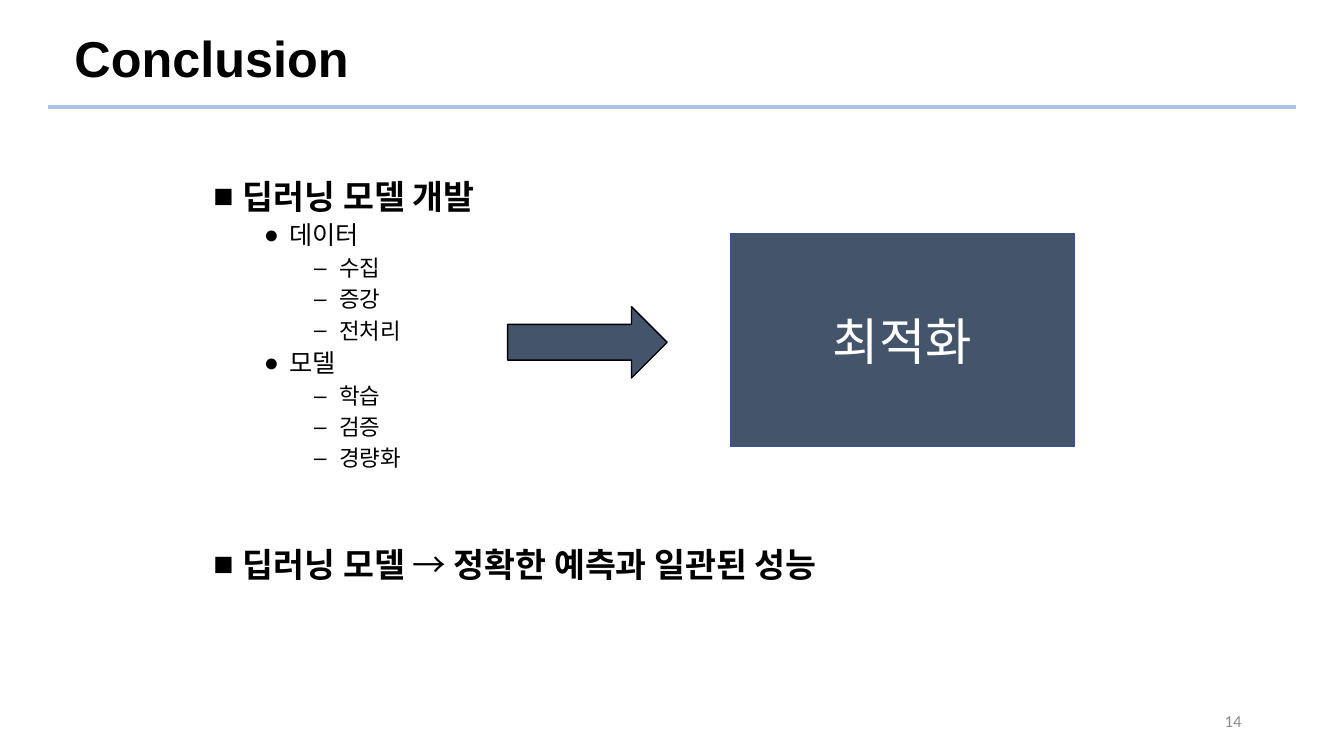
from lxml import etree
from pptx import Presentation
from pptx.dml.color import RGBColor
from pptx.enum.shapes import MSO_CONNECTOR, MSO_SHAPE
from pptx.enum.text import MSO_ANCHOR, MSO_AUTO_SIZE, PP_ALIGN
from pptx.oxml.ns import qn
from pptx.util import Pt

STRAIGHT = MSO_CONNECTOR.STRAIGHT
RECTANGLE, RIGHT_ARROW = MSO_SHAPE.RECTANGLE, MSO_SHAPE.RIGHT_ARROW
TOP, MIDDLE = MSO_ANCHOR.TOP, MSO_ANCHOR.MIDDLE
LEFT, CENTER, RIGHT = PP_ALIGN.LEFT, PP_ALIGN.CENTER, PP_ALIGN.RIGHT
TITLE_ONLY = 5

BLACK, WHITE, GRAY = "000000", "FFFFFF", "8C8C8C"
SLATE, BLUE, PALE_BLUE = "44546A", "325491", "ABC0E4"

# Per level: bullet, size, bold, left margin, hanging indent, space before
LEVELS = [
    ("■", 24, True, 21, 21, 10),
    ("●", 18, False, 54, 18, 5),
    ("‒", 16, False, 90, 18, 5),
]
LINE_FACTOR = 1.08
CLOSING_GAP = 54.4

# Level and text of each outline point
OUTLINE = [
    (0, "딥러닝 모델 개발"),
    (1, "데이터"), (2, "수집"), (2, "증강"), (2, "전처리"),
    (1, "모델"), (2, "학습"), (2, "검증"), (2, "경량화"),
]
CLOSING = [("딥러닝 모델 ", True), ("→ ", False), ("정확한 예측과 일관된 성능", True)]


def color(value):
    return RGBColor.from_string(value)


def add_run(paragraph, text, size, font_name, text_color, bold=False):
    run = paragraph.add_run()
    run.text = text
    run.font.size = Pt(size)
    run.font.name = font_name
    run.font.bold = bold
    run.font.color.rgb = color(text_color)


def set_frame(shape, anchor):
    frame = shape.text_frame
    frame.word_wrap = True
    frame.auto_size = MSO_AUTO_SIZE.NONE
    frame.vertical_anchor = anchor
    return frame


def add_text_box(slide, box, anchor):
    return set_frame(slide.shapes.add_textbox(*map(Pt, box)), anchor)


def add_header(slide, box):
    left, top, width, height = box
    # Title
    title = slide.shapes.title
    title.left, title.top = Pt(left + 12), Pt(top)
    title.width, title.height = Pt(782), Pt(height - 4)
    paragraph = set_frame(title, MIDDLE).paragraphs[0]
    paragraph.alignment = LEFT
    paragraph.line_spacing = 0.9
    add_run(paragraph, "Conclusion", 36, "Arial", BLACK, True)
    # Rule under the title
    bottom = Pt(top + height)
    rule = slide.shapes.add_connector(STRAIGHT, Pt(left), bottom, Pt(left + width), bottom)
    rule.line.color.rgb = color(PALE_BLUE)
    rule.line.width = Pt(3)
    etree.SubElement(rule._element.spPr, qn("a:effectLst"))


def format_point(paragraph, level, space_before):
    bullet, size, _, margin, hanging, _ = LEVELS[level]
    paragraph.level = level
    properties = paragraph._p.get_or_add_pPr()
    properties.set("marL", str(Pt(margin)))
    properties.set("indent", str(-Pt(hanging)))
    etree.SubElement(properties, qn("a:buFont"), typeface="Arial")
    etree.SubElement(properties, qn("a:buChar"), char=bullet)
    paragraph.alignment = LEFT
    paragraph.line_spacing = Pt(size * LINE_FACTOR)
    paragraph.space_before = Pt(space_before)


def add_outline(slide, box):
    frame = add_text_box(slide, box, TOP)
    frame.margin_top = Pt(36)
    points = [(level, [(text, LEVELS[level][2])], LEVELS[level][5]) for level, text in OUTLINE]
    points.append((0, CLOSING, CLOSING_GAP))
    for index, (level, runs, space_before) in enumerate(points):
        paragraph = frame.add_paragraph() if index else frame.paragraphs[0]
        format_point(paragraph, level, space_before if index else 0)
        for text, bold in runs:
            add_run(paragraph, text, LEVELS[level][1], "Arial", BLACK, bold)


def add_block(slide, preset, box, line_color):
    shape = slide.shapes.add_shape(preset, *map(Pt, box))
    shape.shadow.inherit = False
    shape.fill.solid()
    shape.fill.fore_color.rgb = color(SLATE)
    shape.line.color.rgb = color(line_color)
    shape.line.width = Pt(1)
    return shape


def add_result(slide, box):
    left, top, width, height = box
    # Result block at the right end
    block = add_block(slide, RECTANGLE, (left + width - 246, top, 246, height), BLUE)
    paragraph = set_frame(block, MIDDLE).paragraphs[0]
    paragraph.alignment = CENTER
    add_run(paragraph, "최적화", 36, "Calibri", WHITE)
    # Arrow leading to it
    add_block(slide, RIGHT_ARROW, (left, top + 52, 114, 51), BLACK)


def add_slide_number(slide, box):
    paragraph = add_text_box(slide, box, MIDDLE).paragraphs[0]
    paragraph.alignment = RIGHT
    add_run(paragraph, "14", 12, "Calibri", GRAY)


def main():
    presentation = Presentation()
    presentation.slide_width, presentation.slide_height = Pt(960), Pt(540)
    slide = presentation.slides.add_slide(presentation.slide_layouts[TITLE_ONLY])
    add_header(slide, (34, 15, 892, 61.3))
    add_slide_number(slide, (678, 500.5, 216, 28.8))
    add_outline(slide, (145.4, 92.2, 669.6, 447.8))
    add_result(slide, (362.6, 167, 405, 152))
    presentation.save("out.pptx")


if __name__ == "__main__":
    main()
